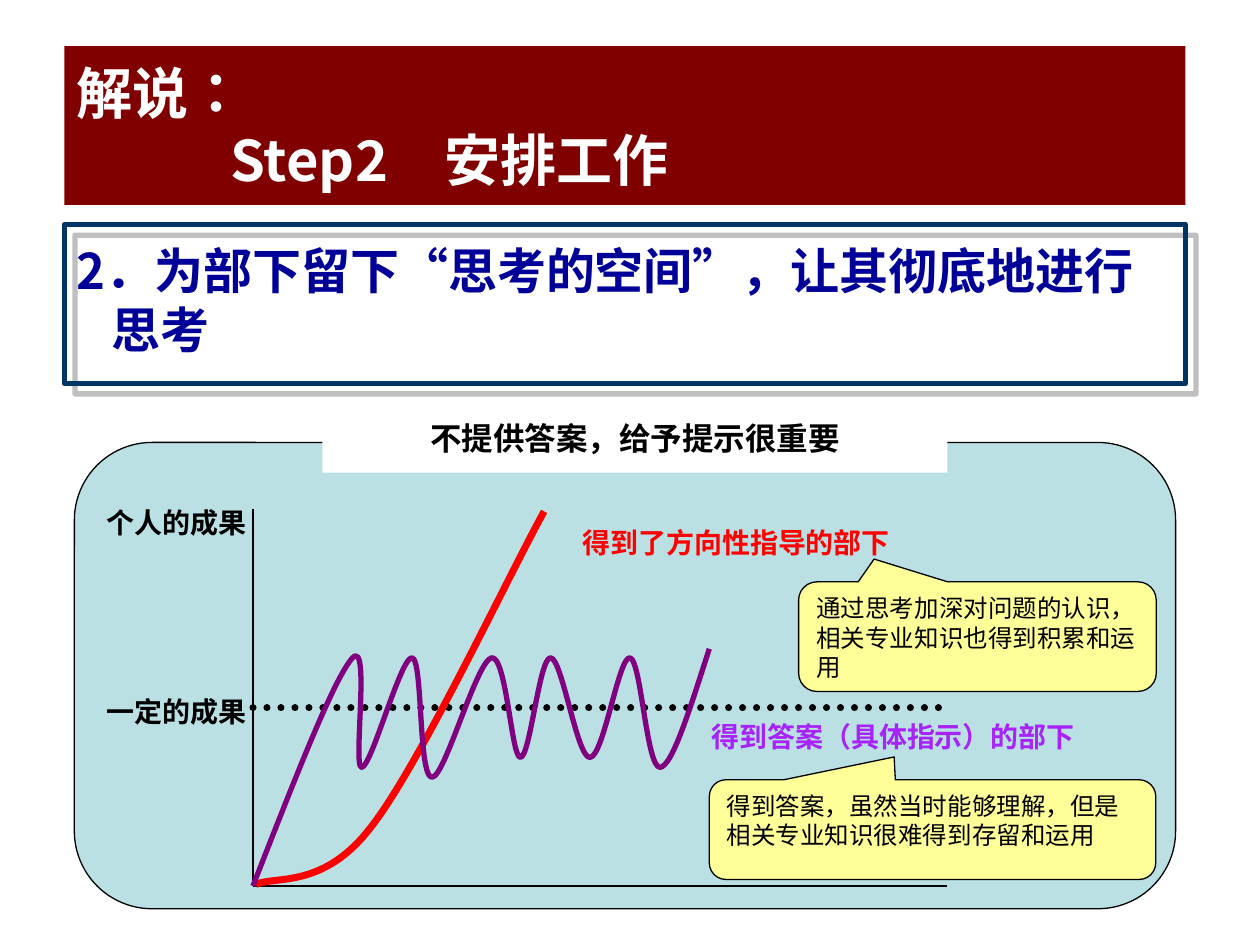
import pptx
import pptx.dml.color
import pptx.enum.dml
import pptx.enum.lang
import pptx.enum.shapes
import pptx.enum.text
import pptx.oxml
import pptx.oxml.ns
import pptx.util
from lxml import etree

Cm = pptx.util.Cm
Pt = pptx.util.Pt
MSO = pptx.enum.shapes.MSO_SHAPE
ALIGN = pptx.enum.text.PP_ALIGN
ANCHOR = pptx.enum.text.MSO_ANCHOR
qn = pptx.oxml.ns.qn

SANS = "Noto Sans CJK SC"
QUOTE_FONT = "Noto Sans CJK JP"

# Each curve is a start point followed by Bezier pieces (two handles, end), in cm.
GUIDED_CURVE = [
    (5.16, 17.83),
    (5.56, 17.65), (6.53, 17.93), (7.49, 16.66),
    (8.46, 15.42), (10.24, 11.63), (10.97, 10.31),
]
ANSWERED_CURVE = [
    (5.1, 17.86),
    (5.92, 15.77), (6.73, 13.67), (7.11, 13.26),
    (7.47, 12.88), (7.11, 15.47), (7.29, 15.47),
    (7.49, 15.47), (8.08, 13.23), (8.31, 13.26),
    (8.53, 13.31), (8.43, 15.67), (8.71, 15.67),
    (8.97, 15.67), (9.6, 13.34), (9.91, 13.26),
    (10.21, 13.21), (10.31, 15.27), (10.49, 15.27),
    (10.69, 15.27), (10.87, 13.26), (11.1, 13.26),
    (11.33, 13.26), (11.63, 15.27), (11.89, 15.27),
    (12.17, 15.27), (12.47, 13.23), (12.7, 13.26),
    (12.93, 13.31), (13.03, 15.49), (13.31, 15.47),
    (13.56, 15.44), (13.92, 14.25), (14.3, 13.08),
]


def rgb(color):
    return pptx.dml.color.RGBColor.from_string(color)


def set_line(line, color, width):
    line.color.rgb = rgb(color)
    line.width = Pt(width)


def add_run(p, text, size, color, bold=True, font=SANS):
    r = p.add_run()
    r.text = text
    r.font.size = Pt(size)
    r.font.bold = bold
    r.font.color.rgb = rgb(color)
    r.font.name = font
    ea = etree.SubElement(r._r.get_or_add_rPr(), qn("a:ea"))
    ea.set("typeface", font)
    return r


def indent(p, left, first=0):
    """Set the left margin and first-line indent of a paragraph, in cm."""
    pPr = p._p.get_or_add_pPr()
    pPr.set("marL", str(Cm(left)))
    pPr.set("indent", str(Cm(first)))


def add_box(s, kind, box, fill=None, line=None, width=0.75):
    sp = s.shapes.add_shape(kind, *map(Cm, box))
    sp.shadow.inherit = False
    if fill:
        sp.fill.solid()
        sp.fill.fore_color.rgb = rgb(fill)
    else:
        sp.fill.background()
    if line:
        set_line(sp.line, line, width)
    else:
        sp.line.fill.background()
    sp.text_frame.word_wrap = True
    return sp


def add_offset_shadow(sp):
    effects = sp._element.spPr.find(qn("a:effectLst"))
    shadow = etree.SubElement(effects, qn("a:outerShdw"), blurRad="0", dist=str(Pt(8.5)),
                              dir=str(45 * 60000), algn="ctr", rotWithShape="0")
    color = etree.SubElement(shadow, qn("a:srgbClr"), val="808080")
    etree.SubElement(color, qn("a:alpha"), val="50000")


def add_line(s, x1, y1, x2, y2, width=0.75):
    c = s.shapes.add_connector(pptx.enum.shapes.MSO_CONNECTOR.STRAIGHT,
                               Cm(x1), Cm(y1), Cm(x2), Cm(y2))
    set_line(c.line, "000000", width)
    etree.SubElement(c._element.spPr, qn("a:effectLst"))
    return c


def add_curve(s, curve, color, width):
    """Draw a freeform whose segments, three by three, become Bezier pieces."""
    points = [(Cm(x), Cm(y)) for x, y in curve]
    builder = s.shapes.build_freeform(*points[0])
    builder.add_line_segments(points[1:], close=False)
    sp = builder.convert_to_shape()
    segments = list(sp._element.iter(qn("a:lnTo")))
    outline = segments[0].getparent()
    for i in range(0, len(segments), 3):
        piece = etree.SubElement(outline, qn("a:cubicBezTo"))
        for segment in segments[i:i + 3]:
            piece.append(segment[0])
            outline.remove(segment)
    sp.shadow.inherit = False
    sp.fill.background()
    set_line(sp.line, color, width)


def add_textbox(s, box):
    tf = s.shapes.add_textbox(*map(Cm, box)).text_frame
    tf.word_wrap = True
    return tf


def add_label(s, x, y, width, text, color="000000"):
    tf = add_textbox(s, (x, y, width, 0.94))
    add_run(tf.paragraphs[0], text, 16, color)


def add_callout(s, box, tip, text):
    sp = add_box(s, MSO.ROUNDED_RECTANGULAR_CALLOUT, box, "FFFF99", "000000")
    for i, value in enumerate((*tip, 0.167)):
        sp.adjustments[i] = value
    sp.text_frame.vertical_anchor = ANCHOR.TOP
    p = sp.text_frame.paragraphs[0]
    p.alignment = ALIGN.LEFT
    add_run(p, text, 14, "000000", bold=False)


def add_title(s):
    tf = add_box(s, MSO.RECTANGLE, (1.3, 0.93, 22.6, 3.2), "800000").text_frame
    tf.vertical_anchor = ANCHOR.MIDDLE
    first, second = tf.paragraphs[0], tf.add_paragraph()
    for p, text in ((first, "解说："), (second, "Step2　安排工作")):
        p.alignment = ALIGN.LEFT
        r = add_run(p, text, 32, "FFFFFF")
        r.font.language_id = pptx.enum.lang.MSO_LANGUAGE_ID.JAPANESE
    indent(second, 3.1)


def add_statement(s):
    p = add_textbox(s, (1.3, 4.72, 23.9, 4.42)).paragraphs[0]
    indent(p, 0.7, -0.7)
    for text, font in (("2．为部下留下", SANS), ("“", QUOTE_FONT), ("思考的空间", SANS),
                       ("”", QUOTE_FONT), ("，让其彻底地进行", SANS)):
        add_run(p, text, 28, "000099", font=font)
    p.add_line_break()
    add_run(p, "思考", 28, "000099")


def add_panel(s):
    add_box(s, MSO.FLOWCHART_ALTERNATE_PROCESS, (1.5, 8.92, 22.2, 9.4), "BBE0E3", "000000")
    tf = add_box(s, MSO.RECTANGLE, (6.5, 8.13, 12.6, 1.4), "FFFFFF").text_frame
    tf.vertical_anchor = ANCHOR.MIDDLE
    tf.paragraphs[0].alignment = ALIGN.CENTER
    add_run(tf.paragraphs[0], "不提供答案，给予提示很重要", 18, "000000")


def add_graph(s):
    left, right, top, level, bottom = 5.1, 19.1, 10.26, 14.27, 17.86
    add_line(s, left, top, left, bottom)
    add_line(s, left, bottom, right, bottom)
    dotted = add_line(s, left, level, right, level, 4)
    dotted.line.dash_style = pptx.enum.dml.MSO_LINE.ROUND_DOT
    dotted._element.spPr.find(qn("a:ln")).set("cap", "rnd")
    add_curve(s, GUIDED_CURVE, "FF0000", 4)
    add_curve(s, ANSWERED_CURVE, "800080", 3)
    add_label(s, 1.9, 13.87, 3.61, "一定的成果")
    add_label(s, 1.9, 10.06, 3.61, "个人的成果")
    add_label(s, 11.5, 10.46, 9, "得到了方向性指导的部下", "FF0000")
    add_label(s, 14.1, 14.38, 10, "得到答案（具体指示）的部下", "A723F9")


def main():
    prs = pptx.Presentation()
    prs.slide_width, prs.slide_height = Cm(25.4), Cm(19.05)
    s = prs.slides.add_slide(prs.slide_layouts[6])
    frame = add_box(s, MSO.RECTANGLE, (1.3, 4.53, 22.6, 3.2), line="003366", width=3)
    add_offset_shadow(frame)
    add_panel(s)
    add_graph(s)
    add_callout(s, (16.1, 11.73, 7.21, 2.21), (-0.289, -0.708),
                "通过思考加深对问题的认识，相关专业知识也得到积累和运用")
    add_callout(s, (14.3, 15.72, 9, 2.01), (-0.086, -0.729),
                "得到答案，虽然当时能够理解，但是相关专业知识很难得到存留和运用")
    add_title(s)
    add_statement(s)
    prs.save("out.pptx")


if __name__ == "__main__":
    main()
